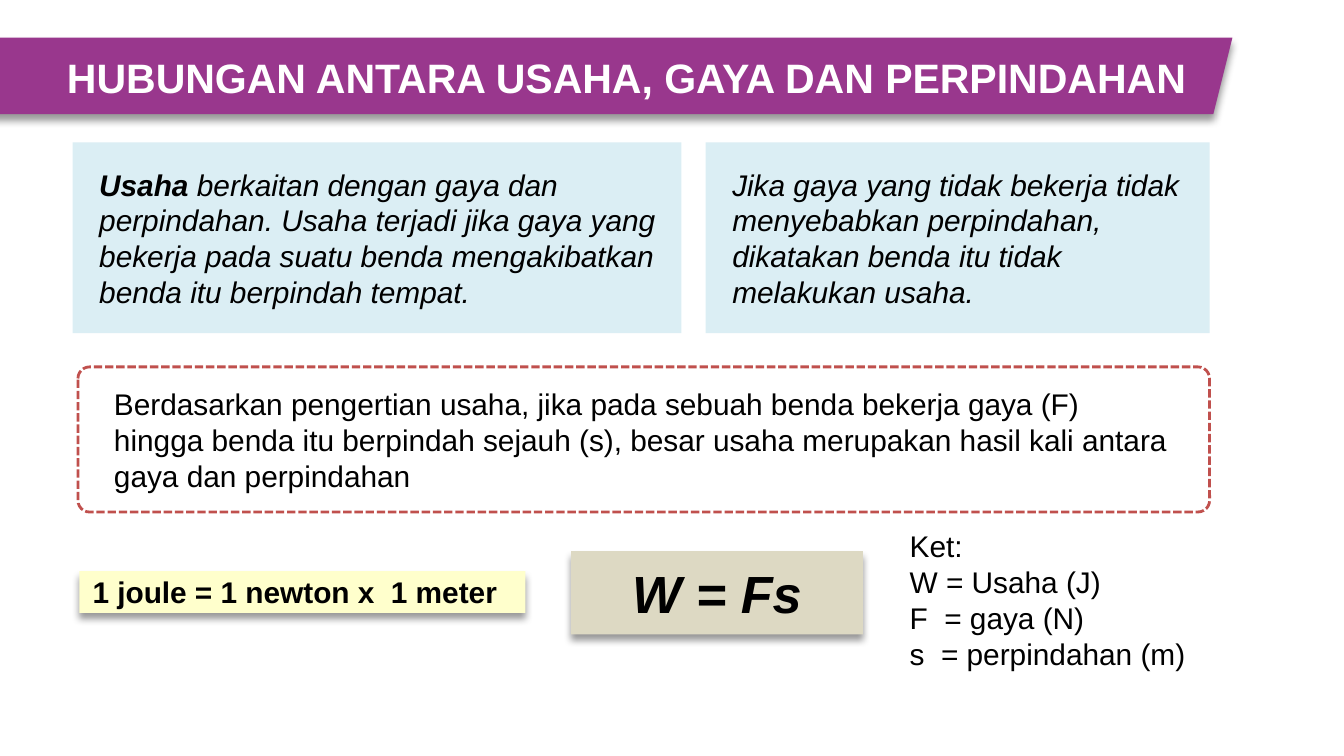
from lxml import etree
from pptx import Presentation
from pptx.dml.color import RGBColor
from pptx.enum.dml import MSO_LINE
from pptx.enum.shapes import MSO_SHAPE
from pptx.enum.text import MSO_ANCHOR, PP_ALIGN
from pptx.oxml.ns import qn
from pptx.util import Inches, Pt

RECTANGLE = MSO_SHAPE.RECTANGLE
ROUNDED = MSO_SHAPE.ROUNDED_RECTANGLE
PARALLELOGRAM = MSO_SHAPE.PARALLELOGRAM
DASH = MSO_LINE.SQUARE_DOT
MIDDLE, TOP = MSO_ANCHOR.MIDDLE, MSO_ANCHOR.TOP
LEFT, CENTER = PP_ALIGN.LEFT, PP_ALIGN.CENTER

BLACK = RGBColor(0x00, 0x00, 0x00)
WHITE = RGBColor(0xFF, 0xFF, 0xFF)
PALE_BLUE = RGBColor(0xDB, 0xEE, 0xF4)
TAN = RGBColor(0xDD, 0xD9, 0xC3)
CREAM = RGBColor(0xFF, 0xFF, 0xCC)
PURPLE = RGBColor(0x99, 0x37, 0x8D)
RED = RGBColor(0xC0, 0x50, 0x4D)

TITLE = "HUBUNGAN ANTARA USAHA, GAYA DAN PERPINDAHAN"
DEFINITIONS = [
    (0.54, 4.53, [
        ("Usaha ", True),
        ("berkaitan dengan gaya dan perpindahan. Usaha terjadi jika gaya yang "
         "bekerja pada suatu benda mengakibatkan benda itu berpindah tempat.", False),
    ]),
    (5.25, 3.75, [
        ("Jika gaya yang tidak bekerja tidak menyebabkan perpindahan, "
         "dikatakan benda itu tidak melakukan usaha.", False),
    ]),
]
EXPLANATION = [
    "Berdasarkan pengertian usaha, jika pada sebuah benda bekerja gaya (F)",
    "hingga benda itu berpindah sejauh (s), besar usaha merupakan hasil kali "
    "antara gaya dan perpindahan",
]
FORMULA = "W = Fs"
UNIT = "1 joule = 1 newton x  1 meter"
LEGEND = ["Ket:", "W = Usaha (J)", "F  = gaya (N)", "s  = perpindahan (m)"]


def add_shadow(shape):
    effects = shape._element.spPr.find(qn("a:effectLst"))
    shadow = etree.SubElement(effects, qn("a:outerShdw"), blurRad=str(Pt(4)),
                              dist=str(Pt(3)), dir="5400000", rotWithShape="0")
    color = etree.SubElement(shadow, qn("a:srgbClr"), val=str(BLACK))
    etree.SubElement(color, qn("a:alpha"), val="40000")


def add_panel(page, preset, area, fill=None, shadow=False):
    panel = page.shapes.add_shape(preset, *map(Inches, area))
    panel.shadow.inherit = False
    panel.line.fill.background()
    if fill is None:
        panel.fill.background()
    else:
        panel.fill.solid()
        panel.fill.fore_color.rgb = fill
    if shadow:
        add_shadow(panel)
    return panel


def write(box, paragraphs, size=16, color=BLACK, bold=None, italic=None,
          align=LEFT, anchor=MIDDLE, indent=0):
    frame = box.text_frame
    frame.word_wrap = True
    frame.vertical_anchor = anchor
    for index, spans in enumerate(paragraphs):
        para = frame.paragraphs[0] if index == 0 else frame.add_paragraph()
        para.alignment = align
        if indent:
            para._p.get_or_add_pPr().set("marL", str(Inches(indent)))
        font = para.font
        font.name, font.size, font.color.rgb = "Arial", Pt(size), color
        font.bold, font.italic = bold, italic
        if isinstance(spans, str):
            spans = [(spans, bold)]
        for text, span_bold in spans:
            span = para.add_run()
            span.text = text
            span.font.bold = span_bold


def add_text(page, area, paragraphs, **style):
    box = page.shapes.add_textbox(*map(Inches, area))
    write(box, paragraphs, anchor=TOP, **style)


deck = Presentation()
deck.slide_width = Inches(10)
deck.slide_height = deck.slide_width * 9 // 16
page = deck.slides.add_slide(deck.slide_layouts[6])

for left, width, spans in DEFINITIONS:
    panel = add_panel(page, RECTANGLE, (left, 1.06, width, 1.42), PALE_BLUE)
    write(panel, [spans], italic=True, indent=0.1)

formula = add_panel(page, RECTANGLE, (4.25, 4.1, 2.17, 0.62), TAN, shadow=True)
write(formula, [FORMULA], size=28, bold=True, italic=True, align=CENTER)
add_text(page, (6.67, 3.88, 2.42, 1.18), LEGEND)
unit = add_panel(page, RECTANGLE, (0.59, 4.25, 3.32, 0.31), CREAM, shadow=True)
write(unit, [UNIT], bold=True)

add_panel(page, PARALLELOGRAM, (-0.25, 0.28, 9.42, 0.57), PURPLE, shadow=True)
add_text(page, (0.4, 0.34, 9.35, 0.47), [TITLE], size=22, color=WHITE, bold=True)

frame = add_panel(page, ROUNDED, (0.58, 2.73, 8.42, 1.08))
frame.adjustments[0] = 0.08
frame.line.color.rgb = RED
frame.line.width = Pt(1.5)
frame.line.dash_style = DASH
add_text(page, (0.75, 2.82, 8.4, 0.91), EXPLANATION)

deck.save("out.pptx")
